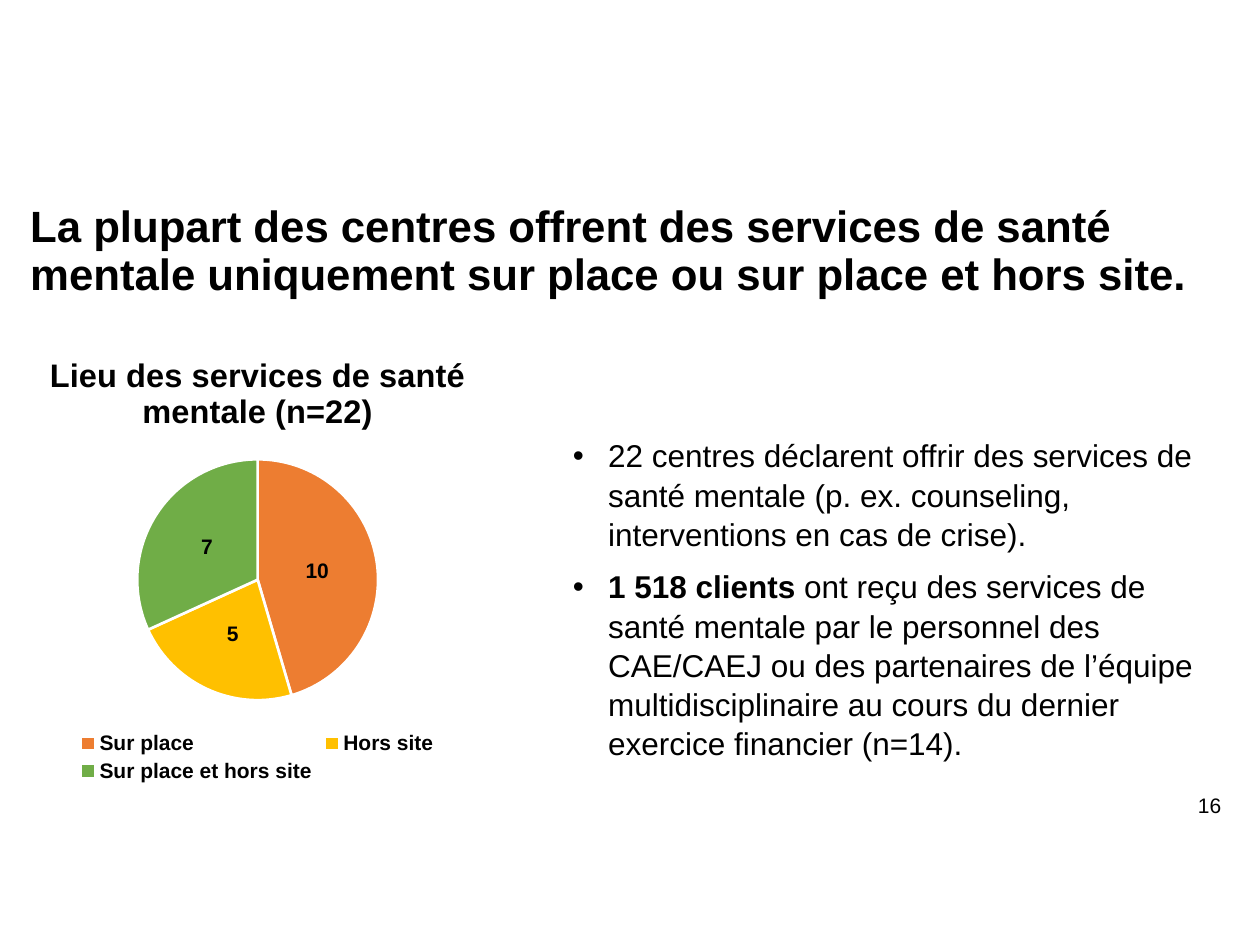
from dataclasses import dataclass

from lxml.etree import SubElement
from pptx import Presentation
from pptx.chart.data import CategoryChartData
from pptx.dml.color import RGBColor
from pptx.enum.chart import XL_CHART_TYPE, XL_LABEL_POSITION, XL_LEGEND_POSITION
from pptx.enum.text import MSO_ANCHOR
from pptx.oxml import parse_xml
from pptx.oxml.ns import nsdecls, qn
from pptx.util import Cm, Pt


@dataclass(frozen=True)
class Theme:
    font: str = "Arial"
    text: RGBColor = RGBColor(0, 0, 0)
    paper: RGBColor = RGBColor(0xFF, 0xFF, 0xFF)
    title: float = 25
    body: float = 18
    chart_title: float = 18.6
    small: float = 12


@dataclass(frozen=True)
class Run:
    text: str
    bold: bool = False


@dataclass(frozen=True)
class TextBlock:
    left: float
    top: float
    width: float
    height: float
    size: float
    paragraphs: tuple[tuple[Run, ...], ...]
    line_spacing: float = 1.0
    bulleted: bool = False


@dataclass(frozen=True)
class Slice:
    name: str
    value: int
    color: RGBColor


THEME = Theme()

BLOCKS = (
    TextBlock(0.36, 4.01, 24.54, 1.52, THEME.title, (
        (Run("La plupart des centres offrent des services de santé mentale "
             "uniquement sur place ou sur place et hors site.", True),),
    ), line_spacing=0.9),
    TextBlock(11.3, 8.64, 13.08, 5.26, THEME.body, (
        (Run("22 centres déclarent offrir des services de santé mentale "
             "(p. ex. counseling, interventions en cas de crise)."),),
        (Run("1 518 clients", True),
         Run(" ont reçu des services de santé mentale par le personnel des "
             "CAE/CAEJ ou des partenaires de l’équipe multidisciplinaire au "
             "cours du dernier exercice financier (n=14).")),
    ), line_spacing=1.04, bulleted=True),
    TextBlock(23.9, 15.85, 1.02, 1.24, THEME.small, ((Run("16"),),)),
)

CHART_TITLE = "Lieu des services de santé mentale (n=22)"
SLICES = (
    Slice("Sur place", 10, RGBColor(0xED, 0x7D, 0x31)),
    Slice("Hors site", 5, RGBColor(0xFF, 0xC0, 0x00)),
    Slice("Sur place et hors site", 7, RGBColor(0x70, 0xAD, 0x47)),
)
PIE_AREA = {"x": 0.32, "y": 0.28, "w": 0.36, "h": 0.53}


def style_font(font, size: float, bold: bool) -> None:
    font.name = THEME.font
    font.size = Pt(size)
    font.bold = bold
    font.color.rgb = THEME.text


def add_bullet(p) -> None:
    pPr = p._p.get_or_add_pPr()
    indent = Cm(0.71)
    pPr.set("marL", str(indent))
    pPr.set("indent", str(-indent))
    SubElement(pPr, qn("a:buFont"), typeface=THEME.font)
    SubElement(pPr, qn("a:buChar"), char="•")


def add_text(slide, block: TextBlock) -> None:
    sp = slide.shapes.add_textbox(
        Cm(block.left), Cm(block.top), Cm(block.width), Cm(block.height))
    tf = sp.text_frame
    tf.word_wrap = True
    tf.vertical_anchor = MSO_ANCHOR.TOP
    for i, runs in enumerate(block.paragraphs):
        p = tf.add_paragraph() if i else tf.paragraphs[0]
        if block.bulleted:
            add_bullet(p)
        p.line_spacing = block.line_spacing
        if i:
            p.space_before = Pt(7.5)
        for run in runs:
            r = p.add_run()
            r.text = run.text
            style_font(r.font, block.size, run.bold)


def place_pie(chart) -> None:
    area = chart._chartSpace.chart.plotArea
    for old in area.findall(qn("c:layout")):
        area.remove(old)
    layout = parse_xml(f"<c:layout {nsdecls('c')}/>")
    manual = SubElement(layout, qn("c:manualLayout"))
    SubElement(manual, qn("c:layoutTarget"), val="inner")
    for axis in "xy":
        SubElement(manual, qn(f"c:{axis}Mode"), val="edge")
    for key, value in PIE_AREA.items():
        SubElement(manual, qn(f"c:{key}"), val=str(value))
    area.insert(0, layout)


def add_pie(slide, slices: tuple[Slice, ...]) -> None:
    data = CategoryChartData()
    data.categories = [s.name for s in slices]
    data.add_series("Series 1", [s.value for s in slices])
    chart = slide.shapes.add_chart(
        XL_CHART_TYPE.PIE, Cm(-1.55), Cm(6.68), Cm(13.49), Cm(9.19), data).chart
    style_font(chart.font, THEME.small, False)

    chart.has_title = True
    chart.chart_title.include_in_layout = False
    r = chart.chart_title.text_frame.paragraphs[0].add_run()
    r.text = CHART_TITLE
    style_font(r.font, THEME.chart_title, True)

    chart.has_legend = True
    chart.legend.position = XL_LEGEND_POSITION.BOTTOM
    chart.legend.include_in_layout = False
    style_font(chart.legend.font, THEME.small, True)

    plot = chart.plots[0]
    plot.vary_by_categories = True
    plot.has_data_labels = True
    labels = plot.data_labels
    labels.show_value = True
    labels.show_percentage = False
    labels.position = XL_LABEL_POSITION.CENTER
    style_font(labels.font, THEME.small, True)
    for i, s in enumerate(slices):
        fmt = plot.series[0].points[i].format
        fmt.fill.solid()
        fmt.fill.fore_color.rgb = s.color
        fmt.line.color.rgb = THEME.paper
        fmt.line.width = Pt(1.5)
    place_pie(chart)


def main() -> None:
    prs = Presentation()
    prs.slide_width, prs.slide_height = Cm(25.4), Cm(19.05)
    slide = prs.slides.add_slide(prs.slide_layouts[6])
    for block in BLOCKS:
        add_text(slide, block)
    add_pie(slide, SLICES)
    prs.save("out.pptx")


if __name__ == "__main__":
    main()
